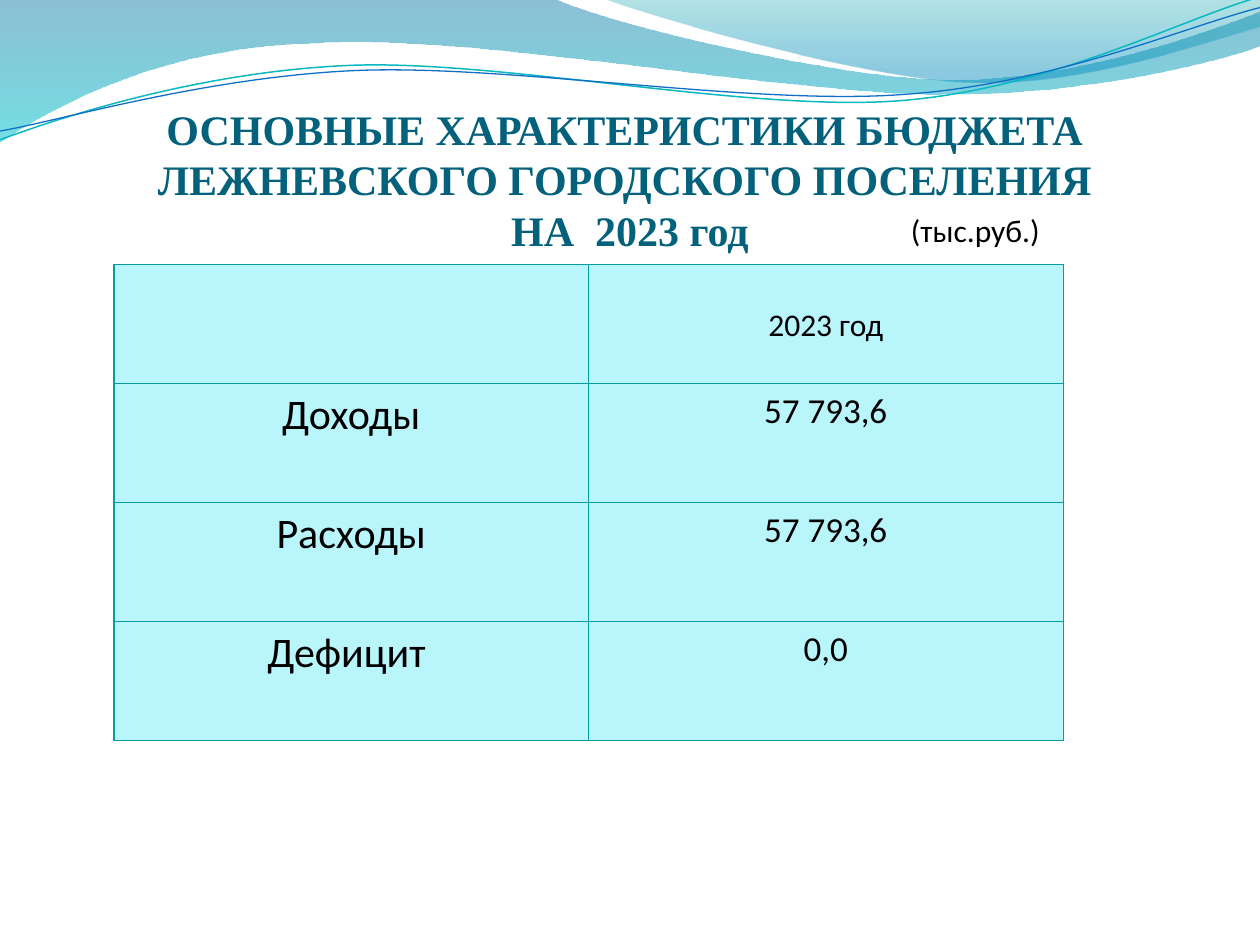
from dataclasses import dataclass
from math import cos, radians, sin
from typing import Optional

from lxml.etree import SubElement
from pptx import Presentation
from pptx.dml.color import RGBColor
from pptx.enum.text import MSO_ANCHOR, PP_ALIGN
from pptx.oxml.ns import qn
from pptx.util import Pt


@dataclass(frozen=True)
class Theme:
    title_color: str = "04617B"
    text_color: str = "000000"
    cell_fill: str = "B9F6FC"
    border: str = "069CA3"
    border_width: float = 0.75
    title_font: str = "Times New Roman"
    body_font: str = "Calibri"
    large: int = 24
    medium: int = 20
    small: int = 18


@dataclass(frozen=True)
class Stop:
    position: float
    color: str
    opacity: int


@dataclass(frozen=True)
class Wave:
    """A segment holds two numbers for a line or six for a Bezier curve."""
    frame: tuple[float, float, float, float]
    start: tuple[float, float]
    segments: tuple[tuple[float, ...], ...]
    stops: tuple[Stop, ...] = ()
    line_color: Optional[str] = None
    line_width: float = 0
    rotation: float = 0


THEME = Theme()

WAVES = (
    Wave((-0.7, -0.7, 721.4, 82.1), (0, 0),
         ((316.8, -0.7), (342.7, 12.2, 478.1, 45.4, 545.8, 45.4),
          (614.2, 45.4, 689.8, 18.7, 720, 6.5), (720.7, 25.9),
          (707.8, 31.7, 626.4, 54.7, 537.1, 54),
          (447.8, 54, 275, 20.2, 185, 24.5),
          (92.9, 25.9, 33.1, 59.8, -0.7, 81.4)),
         stops=(Stop(0, "0074A1", 45), Stop(1, "00C6CF", 55))),
    Wave((344.9, -0.7, 375.1, 50.4), (344.9, -0.7),
         ((366.5, 7.9, 491, 44.6, 553.7, 46.8),
          (616.3, 49.7, 691.9, 23, 720, 15.1), (720, 0)),
         stops=(Stop(0, "00A1A9", 30), Stop(0.8, "008BBF", 45))),
    Wave((-1.4, 15.8, 721.4, 51.1), (0, 79.9),
         ((34.6, 67, 113.8, 41, 199.4, 37.4),
          (284.4, 33.8, 427, 64.1, 513.4, 57.6),
          (599.8, 51.1, 675.4, 10.8, 718.6, -1.4)),
         line_color="0AB8BF", line_width=0.85, rotation=357.3),
    Wave((-1.4, 21.6, 722.2, 41.8), (0, 74.9),
         ((33.8, 69.1, 118.1, 43.9, 203.8, 40.3),
          (290.2, 36.7, 429.8, 60.5, 516.2, 54),
          (601.9, 48.2, 677.5, 15.1, 720, 4.3)),
         line_color="0F6FC6", line_width=0.75, rotation=357.3),
)

TITLE = ("ОСНОВНЫЕ ХАРАКТЕРИСТИКИ БЮДЖЕТА ",
         "ЛЕЖНЕВСКОГО ГОРОДСКОГО ПОСЕЛЕНИЯ ",
         "НА  2023 год")
ROWS = (("", "2023 год"), ("Доходы", "57 793,6"),
        ("Расходы", "57 793,6"), ("Дефицит ", "0,0"))


def local_point(wave: Wave, x: float, y: float) -> tuple[int, int]:
    """Turn a page point back by the rotation and measure it from the frame."""
    left, top, width, height = wave.frame
    dx, dy = x - left - width / 2, y - top - height / 2
    angle = radians(-wave.rotation)
    return (Pt(dx * cos(angle) - dy * sin(angle) + width / 2),
            Pt(dx * sin(angle) + dy * cos(angle) + height / 2))


def curve_outline(shape, wave: Wave) -> None:
    """Give the outline the frame's size and its straight steps true curves."""
    outline = next(shape._element.iter(qn("a:path")))
    outline.set("w", str(shape.width))
    outline.set("h", str(shape.height))
    steps = [step for step in outline if step.tag != qn("a:close")]
    for step, segment in zip(steps, (wave.start, *wave.segments)):
        tag = step.tag if len(segment) == 2 else qn("a:cubicBezTo")
        replacement = step.makeelement(tag)
        for x, y in zip(segment[::2], segment[1::2]):
            local_x, local_y = local_point(wave, x, y)
            SubElement(replacement, qn("a:pt"), x=str(local_x), y=str(local_y))
        outline.replace(step, replacement)


def draw_wave(page, wave: Wave) -> None:
    builder = page.shapes.build_freeform(*map(Pt, wave.start), scale=1.0)
    ends = [tuple(map(Pt, segment[-2:])) for segment in wave.segments]
    builder.add_line_segments(ends, close=bool(wave.stops))
    shape = builder.convert_to_shape()
    shape.left, shape.top, shape.width, shape.height = map(Pt, wave.frame)
    shape.rotation = wave.rotation
    curve_outline(shape, wave)
    shape.shadow.inherit = False
    if wave.line_color:
        shape.fill.background()
        shape.line.color.rgb = RGBColor.from_string(wave.line_color)
        shape.line.width = Pt(wave.line_width)
        return
    shape.line.fill.background()
    shape.fill.gradient()
    shape.fill.gradient_angle = 270
    for target, stop in zip(shape.fill.gradient_stops, wave.stops):
        target.position = stop.position
        target.color.rgb = RGBColor.from_string(stop.color)
    for color, stop in zip(shape._element.spPr.iter(qn("a:srgbClr")), wave.stops):
        SubElement(color, qn("a:alpha"), val=str(stop.opacity * 1000))


def write_text(frame, *lines: str, size: int, font: str = THEME.body_font,
               color: str = THEME.text_color, bold: bool = False,
               align: PP_ALIGN = PP_ALIGN.CENTER) -> None:
    para = frame.paragraphs[0]
    para.alignment = align
    for index, line in enumerate(lines):
        if index:
            para.add_line_break()
        span = para.add_run()
        span.text = line
        span.font.size = Pt(size)
        span.font.name = font
        span.font.bold = bold
        span.font.color.rgb = RGBColor.from_string(color)


def style_cell(cell) -> None:
    # Borders come before the fill in the cell properties
    properties = cell._tc.get_or_add_tcPr()
    for side in ("a:lnL", "a:lnR", "a:lnT", "a:lnB"):
        line = SubElement(properties, qn(side), w=str(Pt(THEME.border_width)))
        SubElement(SubElement(line, qn("a:solidFill")), qn("a:srgbClr"),
                   val=THEME.border)
    cell.fill.solid()
    cell.fill.fore_color.rgb = RGBColor.from_string(THEME.cell_fill)


def draw_title(page) -> None:
    title = page.shapes.title
    title.left, title.top, title.width, title.height = Pt(36), Pt(55.5), Pt(648), Pt(90)
    frame = title.text_frame
    frame.word_wrap = True
    frame.vertical_anchor = MSO_ANCHOR.BOTTOM
    frame.margin_left = frame.margin_right = frame.margin_bottom = 0
    frame.margin_top = Pt(3.6)
    write_text(frame, *TITLE, size=THEME.large, font=THEME.title_font,
               color=THEME.title_color, bold=True)
    page.shapes._spTree.append(title._element)  # in front of the waves


def draw_budget_table(page) -> None:
    table = page.shapes.add_table(len(ROWS), 2, Pt(65.1), Pt(151.2),
                                  Pt(542.4), Pt(272.16)).table
    for row_index, row in enumerate(ROWS):
        for column_index, text in enumerate(row):
            cell = table.cell(row_index, column_index)
            style_cell(cell)
            if row_index == 0:
                size = THEME.small
                cell.margin_top = Pt(24)  # one line lower
            else:
                size = THEME.medium if column_index else THEME.large
            if text:
                write_text(cell.text_frame, text, size=size)


def draw_unit_label(page) -> None:
    box = page.shapes.add_textbox(Pt(513.4), Pt(116.8), Pt(130.3), Pt(29))
    box.text_frame.word_wrap = True
    write_text(box.text_frame, "(тыс.руб.)", size=THEME.small, align=PP_ALIGN.LEFT)


def main() -> None:
    deck = Presentation()
    deck.slide_width, deck.slide_height = Pt(720), Pt(540)
    page = deck.slides.add_slide(deck.slide_layouts[5])
    for wave in WAVES:
        draw_wave(page, wave)
    draw_title(page)
    draw_budget_table(page)
    draw_unit_label(page)
    deck.save("out.pptx")


if __name__ == "__main__":
    main()
